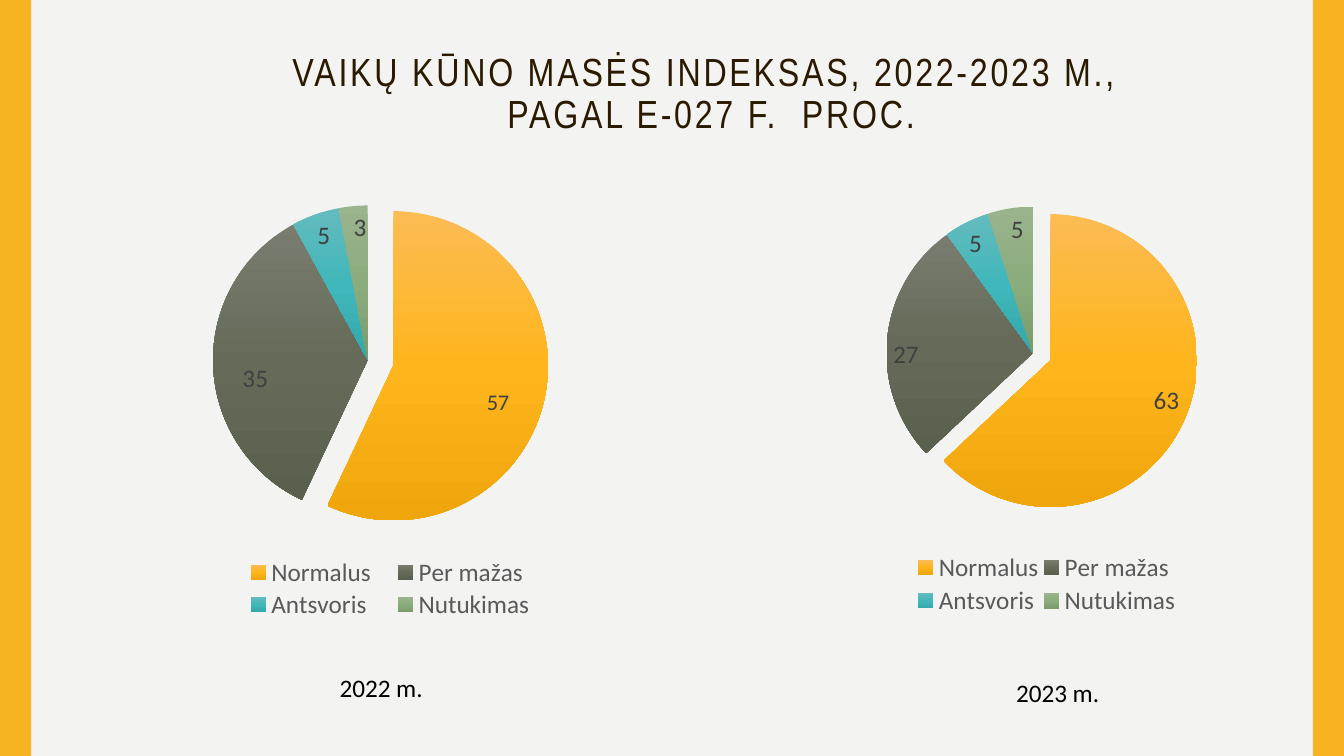
from dataclasses import dataclass, field

from pptx import Presentation
from pptx.chart.chart import Chart
from pptx.chart.data import CategoryChartData
from pptx.dml.color import RGBColor
from pptx.enum.chart import XL_CHART_TYPE as ChartType
from pptx.enum.chart import XL_LABEL_POSITION as LabelPos
from pptx.enum.chart import XL_LEGEND_POSITION as LegendPos
from pptx.enum.shapes import MSO_SHAPE as Preset
from pptx.enum.text import MSO_ANCHOR as Anchor
from pptx.enum.text import PP_ALIGN as Align
from pptx.oxml import parse_xml
from pptx.oxml.ns import nsdecls
from pptx.slide import Slide
from pptx.text.text import Font
from pptx.util import Inches, Pt


@dataclass(frozen=True)
class Theme:
    """Colours, fonts and type sizes of the slide."""

    background: str = "F3F3F2"
    bar: str = "F8B323"
    title: str = "2A1A00"
    caption: str = "000000"
    legend: str = "595959"
    label: str = "404040"
    heading_font: str = "Arial Narrow"
    body_font: str = "Calibri"
    title_size: int = 28
    body_size: int = 18
    small_size: int = 16
    slices: tuple[tuple[str, str, str], ...] = (
        ("FBBC54", "FFB51C", "EFA60C"),
        ("797D70", "656B58", "5A604E"),
        ("64BBBE", "40B7BB", "34A8AB"),
        ("9AB48E", "8BAC7C", "7B9B6C"),
    )


@dataclass(frozen=True)
class Box:
    """A rectangle in inches, or in fractions of a chart."""

    x: float
    y: float
    w: float
    h: float

    def inches(self) -> tuple[Inches, ...]:
        """Return the four lengths for a shape."""
        return tuple(Inches(v) for v in (self.x, self.y, self.w, self.h))


@dataclass(frozen=True)
class LabelShift:
    """A data label moved from its usual place."""

    idx: int
    dx: float
    dy: float
    size: int


@dataclass(frozen=True)
class YearPie:
    """One year's pie chart with its caption."""

    caption: str
    values: tuple[int, ...]
    box: Box
    plot: Box
    legend: Box
    caption_box: Box
    explosion: int
    shifts: tuple[LabelShift, ...] = field(default=())


THEME = Theme()
CATEGORIES = ("Normalus", "Per mažas", "Antsvoris", "Nutukimas")
TITLE_LINES = ("VAIKŲ KŪNO MASĖS INDEKSAS, 2022-2023 M., ", "PAGAL E-027 F.  PROC.")
BARS = (Box(0, 0, 0.31, 7.5), Box(13.02, 0, 0.31, 7.5))
PIES = (
    YearPie("2022 m.", (57, 35, 5, 3), Box(0.44, 1.59, 5.81, 4.72),
            Box(0.288, 0.089, 0.528, 0.662), Box(0.32, 0.83, 0.54, 0.14),
            Box(2.64, 6.62, 2.28, 0.4), 17,
            (LabelShift(0, -0.05, 0.04, THEME.small_size),
             LabelShift(1, 0.04, 0.03, THEME.body_size))),
    YearPie("2023 m.", (63, 27, 5, 5), Box(7.24, 1.3, 5.66, 5.32),
            Box(0.266, 0.141, 0.53, 0.546), Box(0.32, 0.78, 0.47, 0.13),
            Box(9.35, 6.67, 2.28, 0.4), 13),
)


def style_font(font: Font, size: int, color: str, name: str) -> None:
    """Set size, colour and typeface."""
    font.size, font.name = Pt(size), name
    font.color.rgb = RGBColor.from_string(color)


def add_bar(s: Slide, box: Box) -> None:
    """Draw one side bar."""
    sp = s.shapes.add_shape(Preset.RECTANGLE, *box.inches())
    sp.shadow.inherit = False
    sp.fill.solid()
    sp.fill.fore_color.rgb = RGBColor.from_string(THEME.bar)
    sp.line.fill.background()


def add_title(s: Slide) -> None:
    """Place and format the title."""
    sp = s.shapes.title
    sp.left, sp.top, sp.width, sp.height = Box(1.61, 0.47, 10.89, 0.78).inches()
    tf = sp.text_frame
    tf.word_wrap, tf.vertical_anchor = True, Anchor.TOP
    p = tf.paragraphs[0]
    p.alignment, p.line_spacing = Align.CENTER, 0.9
    for i, line in enumerate(TITLE_LINES):
        if i:
            p.add_line_break()
        r = p.add_run()
        r.text = line
        style_font(r.font, THEME.title_size, THEME.title, THEME.heading_font)
        r.font._element.set("spc", "200")


def layout_xml(box: Box, inner: bool = False):
    """Build a manual layout for a chart part."""
    target = '<c:layoutTarget val="inner"/>' if inner else ""
    return parse_xml(
        f'<c:layout {nsdecls("c")}><c:manualLayout>{target}'
        '<c:xMode val="edge"/><c:yMode val="edge"/>'
        f'<c:x val="{box.x}"/><c:y val="{box.y}"/><c:w val="{box.w}"/><c:h val="{box.h}"/>'
        "</c:manualLayout></c:layout>")


def slice_xml(idx: int, colors: tuple[str, ...], explosion: int):
    """Build one gradient slice."""
    stops = "".join(f'<a:gs pos="{i * 50000}"><a:srgbClr val="{c}"/></a:gs>'
                    for i, c in enumerate(colors))
    burst = f'<c:explosion val="{explosion}"/>' if explosion else ""
    return parse_xml(
        f'<c:dPt {nsdecls("c", "a")}><c:idx val="{idx}"/><c:bubble3D val="0"/>{burst}'
        f'<c:spPr><a:gradFill><a:gsLst>{stops}</a:gsLst><a:lin ang="5400000" scaled="0"/>'
        "</a:gradFill><a:ln><a:noFill/></a:ln></c:spPr></c:dPt>")


def add_labels(chart: Chart, pie: YearPie) -> None:
    """Show the values inside the slices."""
    plot = chart.plots[0]
    ser = plot.series[0]
    labels = ser.data_labels
    labels.show_value, labels.position = True, LabelPos.INSIDE_END
    style_font(labels.font, THEME.body_size, THEME.label, THEME.body_font)
    for shift in pie.shifts:
        label = ser.points[shift.idx].data_label
        style_font(label.font, shift.size, THEME.label, THEME.body_font)
        label.position = LabelPos.INSIDE_END
        idx = ser._element.xpath(f"c:dLbls/c:dLbl/c:idx[@val='{shift.idx}']")[0]
        idx.addnext(parse_xml(
            f'<c:layout {nsdecls("c")}><c:manualLayout><c:x val="{shift.dx}"/>'
            f'<c:y val="{shift.dy}"/></c:manualLayout></c:layout>'))


def add_pie(s: Slide, pie: YearPie) -> None:
    """Draw one pie chart."""
    data = CategoryChartData()
    data.categories = CATEGORIES
    data.add_series("Series 1", pie.values)
    chart = s.shapes.add_chart(ChartType.PIE, *pie.box.inches(), data).chart
    chart.has_title = False
    style_font(chart.font, 10, THEME.caption, THEME.body_font)
    plot = chart.plots[0]
    plot.vary_by_categories = True
    cat = plot.series[0]._element.xpath("c:cat")[0]
    for i, colors in enumerate(THEME.slices):
        cat.addprevious(slice_xml(i, colors, 0 if i else pie.explosion))
    add_labels(chart, pie)
    area = chart._chartSpace.xpath("c:chart/c:plotArea")[0]
    for old in area.xpath("c:layout"):
        area.remove(old)
    area.insert(0, layout_xml(pie.plot, inner=True))
    chart.has_legend = True
    legend = chart.legend
    legend.position, legend.include_in_layout = LegendPos.BOTTOM, False
    style_font(legend.font, THEME.body_size, THEME.legend, THEME.body_font)
    for old in legend._element.xpath("c:layout"):
        legend._element.remove(old)
    legend._element.xpath("c:legendPos")[0].addnext(layout_xml(pie.legend))


def add_caption(s: Slide, pie: YearPie) -> None:
    """Write the year below its chart."""
    tf = s.shapes.add_textbox(*pie.caption_box.inches()).text_frame
    tf.word_wrap = True
    p = tf.paragraphs[0]
    p.alignment = Align.CENTER
    r = p.add_run()
    r.text = pie.caption
    style_font(r.font, THEME.body_size, THEME.caption, THEME.body_font)


def main() -> None:
    """Build and save the slide."""
    prs = Presentation()
    prs.slide_width, prs.slide_height = Inches(13.33), Inches(7.5)
    s = prs.slides.add_slide(prs.slide_layouts[5])
    s.background.fill.solid()
    s.background.fill.fore_color.rgb = RGBColor.from_string(THEME.background)
    add_title(s)
    for bar in BARS:
        add_bar(s, bar)
    for pie in PIES:
        add_pie(s, pie)
        add_caption(s, pie)
    prs.save("out.pptx")


if __name__ == "__main__":
    main()
